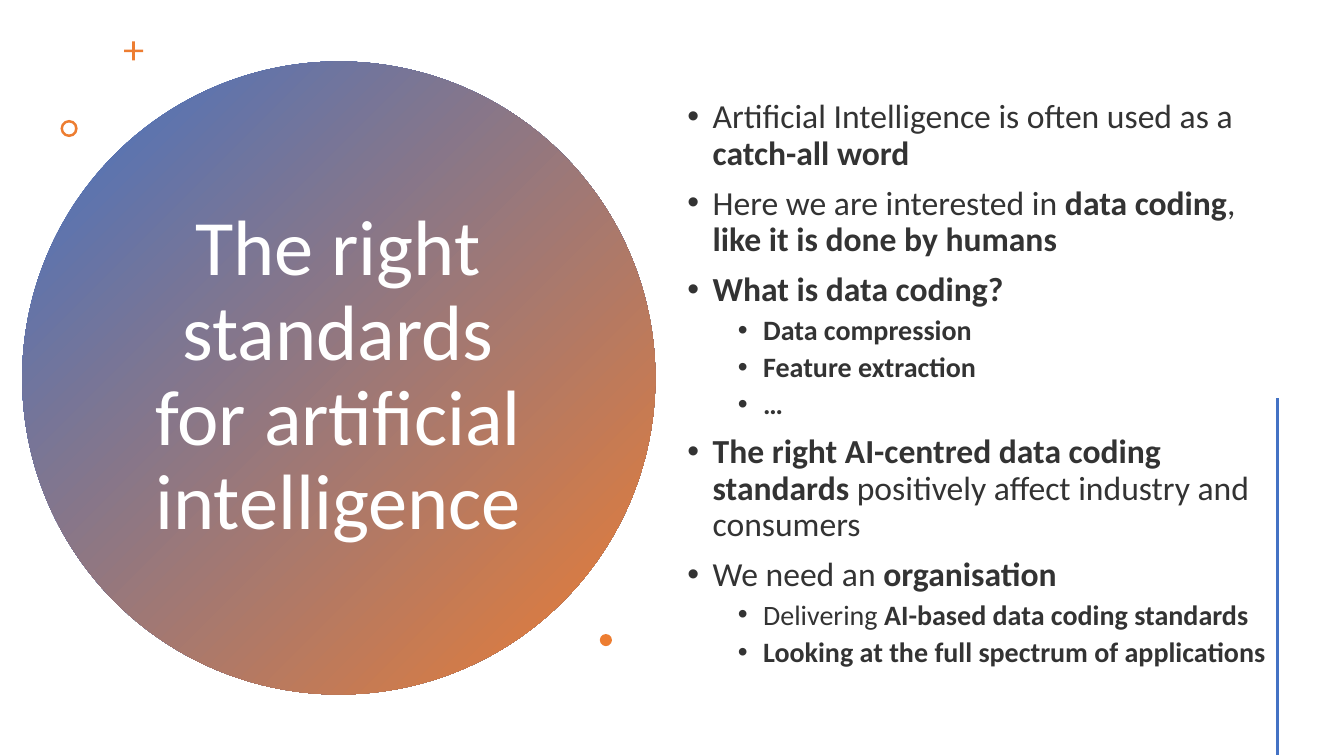
from dataclasses import dataclass

from lxml.etree import SubElement
from pptx import Presentation
from pptx.dml.color import RGBColor as Rgb
from pptx.enum.shapes import MSO_CONNECTOR as Link, MSO_SHAPE as Kind
from pptx.enum.text import MSO_ANCHOR as Anchor, MSO_AUTO_SIZE as Fit, PP_ALIGN as Align
from pptx.oxml.ns import qn
from pptx.util import Inches, Pt

WIDE, HIGH = Inches(13.33), Inches(7.5)


@dataclass(frozen=True)
class Theme:
    """Colours, font and type sizes of the slide."""
    font: str = "Calibri"
    blue: Rgb = Rgb(0x44, 0x72, 0xC4)
    orange: Rgb = Rgb(0xED, 0x7D, 0x31)
    white: Rgb = Rgb(0xFF, 0xFF, 0xFF)
    ink: Rgb = Rgb(0x33, 0x33, 0x33)
    head: int = 56
    sizes: tuple = (24, 20)
    gaps: tuple = (10, 5)
    indents: tuple = (0.25, 0.75)
    hang: float = 0.25


LOOK = Theme()
TITLE = "The right standards for artificial intelligence"
POINTS = (
    (0, "Artificial Intelligence is often used as a *catch-all word*"),
    (0, "Here we are interested in *data coding*, *like it is done by humans*"),
    (0, "*What is data coding?*"),
    (1, "*Data compression*"),
    (1, "*Feature extraction*"),
    (1, "*…*"),
    (0, "*The right AI-centred data coding standards *positively affect industry and consumers"),
    (0, "We need an *organisation*"),
    (1, "Delivering* AI-based data coding standards*"),
    (1, "*Looking at the full spectrum of applications*"),
)


def across(share):
    """Turn a percentage of the slide width into a length."""
    return int(WIDE * share / 100)


def down(share):
    """Turn a percentage of the slide height into a length."""
    return int(HIGH * share / 100)


def place(shape, x, y, w, h):
    """Move a shape to a box given in percentages of the slide."""
    shape.left, shape.top = across(x), down(y)
    shape.width, shape.height = across(w), down(h)


def style(para, size, color):
    """Set the font and line spacing of a paragraph."""
    para.font.name, para.font.size = LOOK.font, Pt(size)
    para.font.color.rgb = color
    para.line_spacing = 0.9


def frame(holder, box):
    """Place a placeholder and return its centred text frame."""
    place(holder, *box)
    text = holder.text_frame
    text.word_wrap, text.auto_size = True, Fit.NONE
    text.vertical_anchor = Anchor.MIDDLE
    return text


def add_mark(slide, kind, box, adjust=None):
    """Add an orange preset shape without outline."""
    mark = slide.shapes.add_shape(kind, 0, 0, 1, 1)
    place(mark, *box)
    mark.shadow.inherit = False
    mark.fill.solid()
    mark.fill.fore_color.rgb = LOOK.orange
    mark.line.fill.background()
    if adjust is not None:
        mark.adjustments[0] = adjust
    return mark


def add_disc(slide, box):
    """Add the large gradient circle behind the title."""
    disc = add_mark(slide, Kind.OVAL, box)
    disc.fill.gradient()
    disc.fill.gradient_angle = 315
    for stop, color in zip(disc.fill.gradient_stops, (LOOK.blue, LOOK.orange)):
        stop.color.rgb = color
    slide.shapes.title.element.addprevious(disc.element)


def set_title(slide, box):
    """Fill the title placeholder."""
    text = frame(slide.shapes.title, box)
    text.text = TITLE
    para = text.paragraphs[0]
    para.alignment = Align.CENTER
    style(para, LOOK.head, LOOK.white)


def add_point(para, level, words):
    """Write one bullet, with bold between asterisks."""
    para.level = level
    style(para, LOOK.sizes[level], LOOK.ink)
    para.space_before = Pt(LOOK.gaps[level])
    props = para._p.get_or_add_pPr()
    props.set("marL", str(Inches(LOOK.indents[level])))
    props.set("indent", str(-Inches(LOOK.hang)))
    bullet = SubElement(props, qn("a:buChar"), char="•")
    font = SubElement(props, qn("a:buFont"), typeface="Arial")
    bullet.addprevious(font)
    props.append(props.find(qn("a:defRPr")))
    for turn, part in enumerate(words.split("*")):
        if part:
            run = para.add_run()
            run.text, run.font.bold = part, turn % 2 == 1


def set_body(slide, box):
    """Fill the body placeholder with the bullets."""
    text = frame(slide.placeholders[1], box)
    for turn, (level, words) in enumerate(POINTS):
        para = text.add_paragraph() if turn else text.paragraphs[0]
        add_point(para, level, words)


def add_rule(slide, x, top, end):
    """Add the upright line at the right edge."""
    rule = slide.shapes.add_connector(
        Link.STRAIGHT, across(x), down(top), across(x), down(end))
    rule.line.color.rgb, rule.line.width = LOOK.blue, Pt(2)
    SubElement(rule.element.spPr, qn("a:effectLst"))


def main():
    """Build and save the slide."""
    deck = Presentation()
    deck.slide_width, deck.slide_height = WIDE, HIGH
    slide = deck.slides.add_slide(deck.slide_layouts[1])
    add_disc(slide, (1.65, 8.13, 47.11, 83.73))
    set_title(slide, (10.2, 18.8, 29.93, 62.27))
    set_body(slide, (50.4, 11.73, 44.65, 78.13))
    add_mark(slide, Kind.CROSS, (9.23, 5.47, 1.43, 2.53), 0.43)
    add_mark(slide, Kind.DONUT, (4.5, 15.87, 1.28, 2.27), 0.15)
    add_mark(slide, Kind.OVAL, (44.63, 83.87, 0.9, 1.6))
    add_rule(slide, 95.05, 52.67, 99.87)
    deck.save("out.pptx")


if __name__ == "__main__":
    main()
